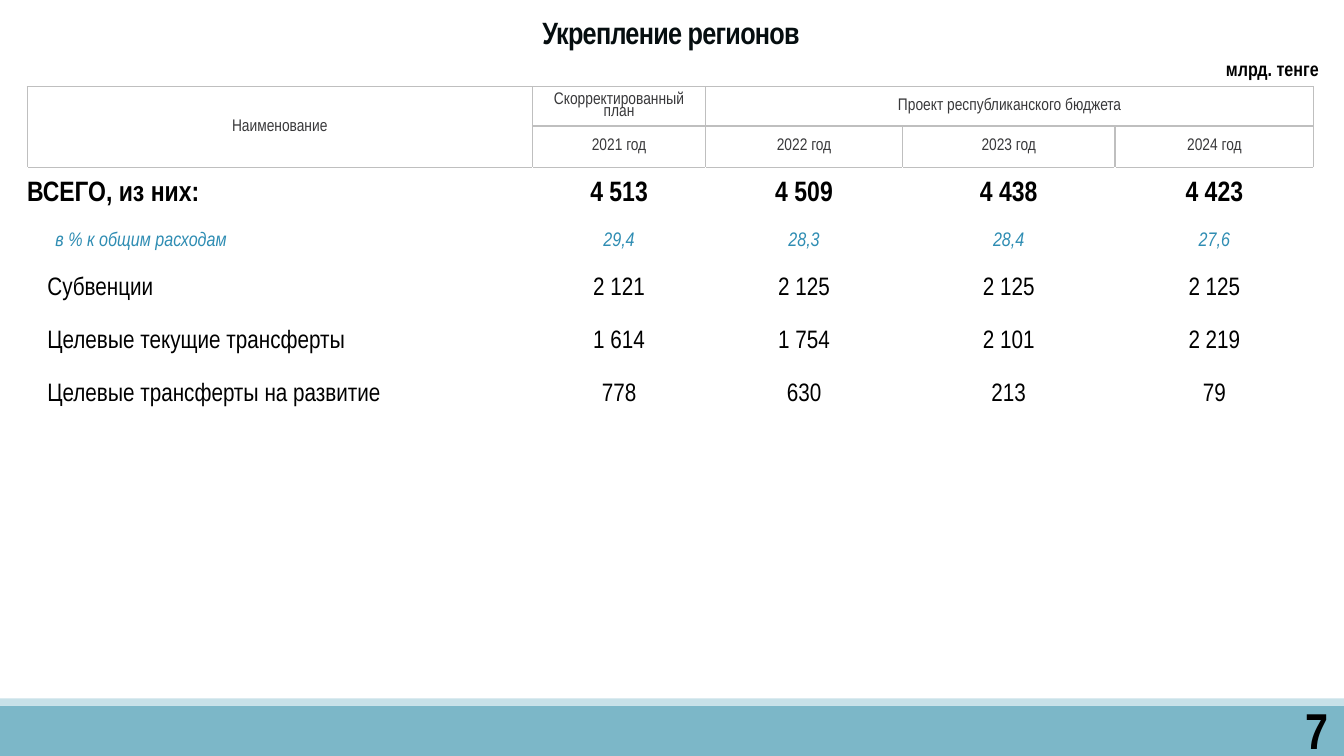
from dataclasses import dataclass

import pptx
import pptx.dml.color
import pptx.enum.shapes
import pptx.enum.text
import pptx.oxml.ns
import pptx.util
from lxml import etree

Inches = pptx.util.Inches
Pt = pptx.util.Pt
RGBColor = pptx.dml.color.RGBColor
MIDDLE = pptx.enum.text.MSO_ANCHOR.MIDDLE
ALIGN = pptx.enum.text.PP_ALIGN
qn = pptx.oxml.ns.qn


@dataclass(frozen=True)
class Theme:
    font: str = "Arial Narrow"
    title: str = "060E10"
    text: str = "000000"
    header: str = "38383A"
    accent: str = "2F8DB3"
    grid: str = "BFBFBF"
    white: str = "FFFFFF"
    band: str = "7CB7C8"
    band_edge: str = "C8E1E8"
    title_size: int = 22
    unit_size: int = 14
    page_size: int = 36
    header_size: int = 12
    total_size: int = 20
    share_size: int = 14
    item_size: int = 18


THEME = Theme()


@dataclass(frozen=True)
class Style:
    size: int
    color: str
    bold: bool = False
    italic: bool = False


HEADER = Style(THEME.header_size, THEME.header)
TOTAL = Style(THEME.total_size, THEME.text, bold=True)
SHARE = Style(THEME.share_size, THEME.accent, italic=True)
ITEM = Style(THEME.item_size, THEME.text)

COLUMN_WIDTHS = (5.01, 1.72, 1.95, 2.11, 1.97)
ROW_HEIGHTS = (0.39, 0.41, 0.53, 0.4, 0.54, 0.52, 0.54)
HEADER_ROWS = (
    ("Наименование", "Скорректированный\nплан", "Проект республиканского бюджета", "", ""),
    ("", "2021 год", "2022 год", "2023 год", "2024 год"),
)
BODY_ROWS = (
    (TOTAL, 0, ("ВСЕГО, из них:", "4 513", "4 509", "4 438", "4 423")),
    (SHARE, 0.28, ("в % к общим расходам", "29,4", "28,3", "28,4", "27,6")),
    (ITEM, 0.2, ("Субвенции", "2 121", "2 125", "2 125", "2 125")),
    (ITEM, 0.2, ("Целевые текущие трансферты", "1 614", "1 754", "2 101", "2 219")),
    (ITEM, 0.2, ("Целевые трансферты на развитие", "778", "630", "213", "79")),
)


def write_text(text_frame, text, style, alignment, line_spacing=1.0):
    """Write one paragraph per line of text and return the runs."""
    runs = []
    for index, line in enumerate(text.split("\n")):
        paragraph = text_frame.add_paragraph() if index else text_frame.paragraphs[0]
        paragraph.alignment = alignment
        paragraph.line_spacing = line_spacing
        paragraph.space_before = Pt(0)
        run = paragraph.add_run()
        run.text = line
        run.font.name = THEME.font
        run.font.size = Pt(style.size)
        run.font.bold = style.bold
        run.font.italic = style.italic
        run.font.color.rgb = RGBColor.from_string(style.color)
        runs.append(run)
    return runs


def add_band(slide, top, height, color):
    band = slide.shapes.add_shape(
        pptx.enum.shapes.MSO_SHAPE.RECTANGLE,
        Inches(0), Inches(top), Inches(13.33), Inches(height))
    band.shadow.inherit = False
    band.fill.solid()
    band.fill.fore_color.rgb = RGBColor.from_string(color)
    band.line.fill.background()


def set_title(slide, text):
    title = slide.shapes.title
    title.left, title.top = Inches(-0.01), Inches(0.04)
    title.width, title.height = Inches(13.33), Inches(0.52)
    title.text_frame.auto_size = pptx.enum.text.MSO_AUTO_SIZE.NONE
    title.text_frame.vertical_anchor = MIDDLE
    style = Style(THEME.title_size, THEME.title, bold=True)
    for run in write_text(title.text_frame, text, style, ALIGN.CENTER, 1.1):
        run.font._element.set("spc", "-50")


def add_right_label(slide, text, left, top, width, height, size, line_spacing=1.0):
    box = slide.shapes.add_textbox(Inches(left), Inches(top), Inches(width), Inches(height))
    box.text_frame.word_wrap = True
    box.text_frame.vertical_anchor = MIDDLE
    style = Style(size, THEME.text, bold=True)
    write_text(box.text_frame, text, style, ALIGN.RIGHT, line_spacing)


def set_borders(cell, color, top_color):
    properties = cell._tc.get_or_add_tcPr()
    for edge in ("lnL", "lnR", "lnT", "lnB"):
        line = etree.SubElement(properties, qn("a:" + edge), w=str(Pt(1)))
        fill = etree.SubElement(line, qn("a:solidFill"))
        etree.SubElement(fill, qn("a:srgbClr"), val=top_color if edge == "lnT" else color)


def format_cell(cell, color, top_color, indent=0.01):
    set_borders(cell, color, top_color)
    cell.fill.background()
    cell.vertical_anchor = MIDDLE
    cell.margin_left = Inches(indent)
    cell.margin_right = cell.margin_top = Inches(0.01)
    cell.margin_bottom = Inches(0)


def add_budget_table(slide):
    table = slide.shapes.add_table(
        len(ROW_HEIGHTS), len(COLUMN_WIDTHS), Inches(0.27), Inches(0.86),
        Inches(sum(COLUMN_WIDTHS)), Inches(sum(ROW_HEIGHTS))).table
    table.first_row = table.horz_banding = False
    for column, width in zip(table.columns, COLUMN_WIDTHS):
        column.width = Inches(width)
    for row, height in zip(table.rows, ROW_HEIGHTS):
        row.height = Inches(height)
    table.cell(0, 0).merge(table.cell(1, 0))
    table.cell(0, 2).merge(table.cell(0, 4))

    for row_index, texts in enumerate(HEADER_ROWS):
        for column_index, text in enumerate(texts):
            cell = table.cell(row_index, column_index)
            format_cell(cell, THEME.grid, THEME.grid)
            if text:
                write_text(cell.text_frame, text, HEADER, ALIGN.CENTER, 0.8)

    for row_index, (style, indent, texts) in enumerate(BODY_ROWS, len(HEADER_ROWS)):
        top_color = THEME.grid if style is TOTAL else THEME.white
        for column_index, text in enumerate(texts):
            cell = table.cell(row_index, column_index)
            is_name = column_index == 0
            format_cell(cell, THEME.white, top_color, indent if is_name else 0.01)
            write_text(cell.text_frame, text, style, ALIGN.LEFT if is_name else ALIGN.CENTER)


def main():
    presentation = pptx.Presentation()
    presentation.slide_width = Inches(13.33)
    presentation.slide_height = Inches(7.5)
    slide = presentation.slides.add_slide(presentation.slide_layouts.get_by_name("Title Only"))
    add_band(slide, 7, 0.5, THEME.band)
    add_band(slide, 6.93, 0.07, THEME.band_edge)
    add_right_label(slide, "7", 11.84, 7.04, 1.43, 0.4, THEME.page_size)
    set_title(slide, "Укрепление регионов")
    add_budget_table(slide)
    add_right_label(slide, "млрд. тенге", 11.98, 0.43, 1.2, 0.48, THEME.unit_size, 1.1)
    presentation.save("out.pptx")


if __name__ == "__main__":
    main()
